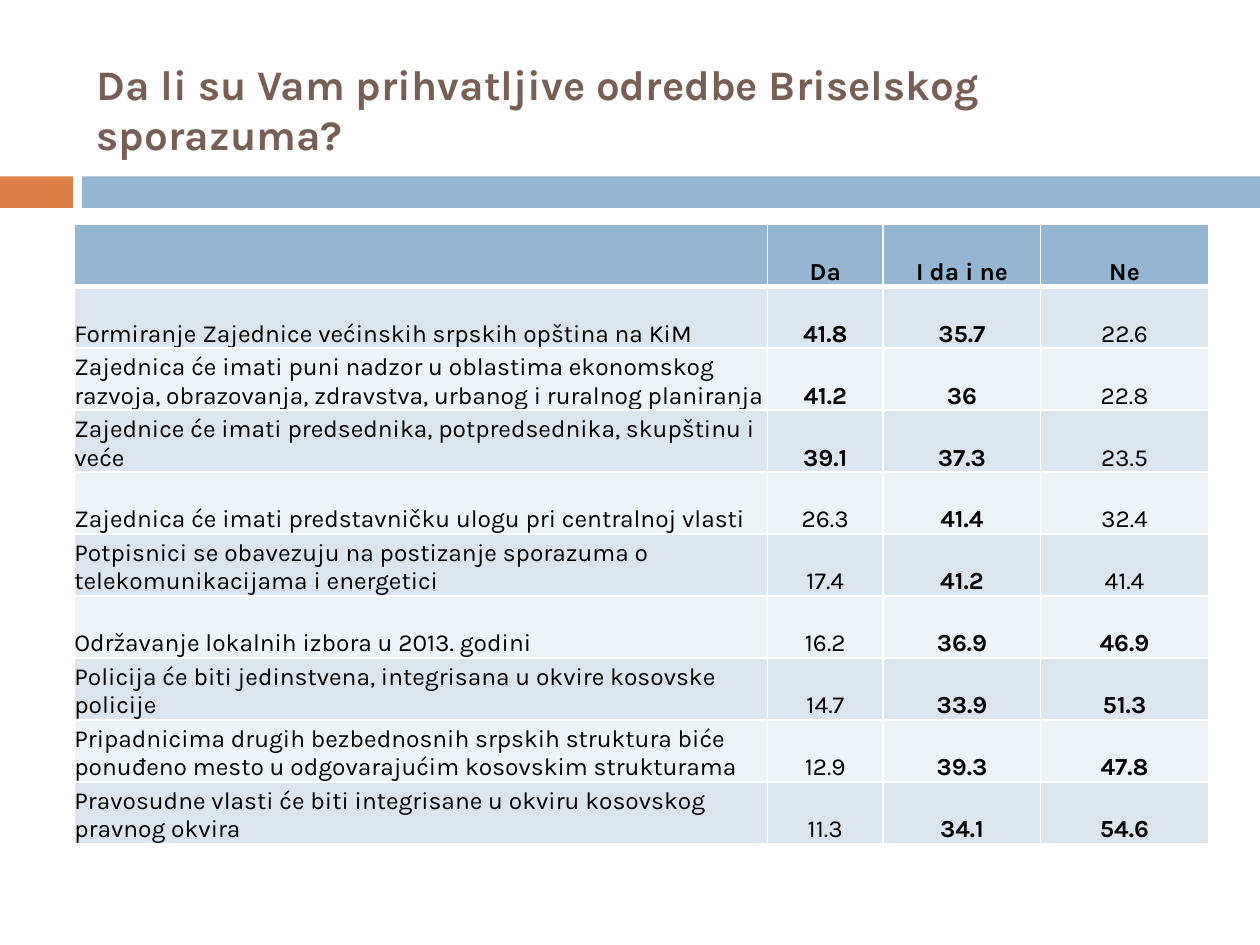
from pptx import Presentation
from pptx.dml.color import RGBColor
from pptx.enum.shapes import MSO_SHAPE
from pptx.enum.text import MSO_ANCHOR, PP_ALIGN
from pptx.oxml import parse_xml
from pptx.oxml.ns import nsdecls
from pptx.util import Inches, Pt

RECTANGLE = MSO_SHAPE.RECTANGLE
MIDDLE, BOTTOM = MSO_ANCHOR.MIDDLE, MSO_ANCHOR.BOTTOM
LEFT, CENTER = PP_ALIGN.LEFT, PP_ALIGN.CENTER
FONT = "Karla"
COLORS = {
    "title": "775F55", "accent": "DD8047", "band": "94B6D2", "text": "000000",
    "odd": "DCE5EE", "even": "EEF3F7", "border": "FFFFFF",
}
WIDTH, HEIGHT = Inches(10), Inches(7.5)
COLUMN_WIDTHS = [5.5, 0.92, 1.25, 1.33]
ROW_HEIGHT = 0.492
HEADERS = ["", "Da", "I da i ne", "Ne"]
ANSWERS = [
    ("Formiranje Zajednice većinskih srpskih opština na KiM", "41.8", "35.7", "22.6"),
    ("Zajednica će imati puni nadzor u oblastima ekonomskog razvoja, obrazovanja, "
     "zdravstva, urbanog i ruralnog planiranja", "41.2", "36", "22.8"),
    ("Zajednice će imati predsednika, potpredsednika, skupštinu i veće", "39.1", "37.3", "23.5"),
    ("Zajednica će imati predstavničku ulogu pri centralnoj vlasti", "26.3", "41.4", "32.4"),
    ("Potpisnici se obavezuju na postizanje sporazuma o telekomunikacijama i energetici",
     "17.4", "41.2", "41.4"),
    ("Održavanje lokalnih izbora u 2013. godini", "16.2", "36.9", "46.9"),
    ("Policija će biti jedinstvena, integrisana u okvire kosovske policije",
     "14.7", "33.9", "51.3"),
    ("Pripadnicima drugih bezbednosnih srpskih struktura biće ponuđeno mesto u "
     "odgovarajućim kosovskim strukturama", "12.9", "39.3", "47.8"),
    ("Pravosudne vlasti će biti integrisane u okviru kosovskog pravnog okvira",
     "11.3", "34.1", "54.6"),
]
BOLD_COLUMNS = [{1, 2, 3}] + [{1, 2}] * 3 + [{2}] * 2 + [{2, 3}] * 4


def write(frame, text, size=14, color="text", bold=False, align=LEFT):
    para = frame.paragraphs[0]
    para.alignment = align
    span = para.add_run()
    span.text = text
    span.font.name = FONT
    span.font.size = Pt(size)
    span.font.bold = bold
    span.font.color.rgb = RGBColor.from_string(COLORS[color])


def add_borders(cell, **points):
    properties = cell._tc.get_or_add_tcPr()
    for position, side in enumerate("LRTB"):
        properties.insert(position, parse_xml(
            f'<a:ln{side} {nsdecls("a")} w="{Pt(points.get(side, 1))}"><a:solidFill>'
            f'<a:srgbClr val="{COLORS["border"]}"/></a:solidFill></a:ln{side}>'))


deck = Presentation()
deck.slide_width, deck.slide_height = WIDTH, HEIGHT
page = deck.slides.add_slide(deck.slide_layouts[6])

for left, width, color in [(0, 0.58, "accent"), (0.65, 9.35, "band")]:
    bar = page.shapes.add_shape(
        RECTANGLE, Inches(left), Inches(1.4), Inches(width), Inches(0.25))
    bar.shadow.inherit = False
    bar.fill.solid()
    bar.fill.fore_color.rgb = RGBColor.from_string(COLORS[color])
    bar.line.fill.background()

title_box = page.shapes.add_textbox(Inches(0.67), Inches(0.25), Inches(8.92), Inches(1.22))
title_box.text_frame.word_wrap = True
title_box.text_frame.vertical_anchor = MIDDLE
write(title_box.text_frame, "Da li su Vam prihvatljive odredbe Briselskog sporazuma?",
      size=24, color="title", bold=True)

rows = [HEADERS] + ANSWERS
table = page.shapes.add_table(
    len(rows), len(HEADERS), Inches(0.59), Inches(1.78),
    Inches(sum(COLUMN_WIDTHS)), Inches(ROW_HEIGHT * len(rows))).table
for column, width in zip(table.columns, COLUMN_WIDTHS):
    column.width = Inches(width)

for row_index, texts in enumerate(rows):
    table.rows[row_index].height = Inches(ROW_HEIGHT)
    is_header = row_index == 0
    fill = "band" if is_header else "odd" if row_index % 2 else "even"
    for column_index, text in enumerate(texts):
        cell = table.cell(row_index, column_index)
        cell.fill.solid()
        cell.fill.fore_color.rgb = RGBColor.from_string(COLORS[fill])
        cell.vertical_anchor = BOTTOM
        cell.margin_left = cell.margin_right = cell.margin_top = cell.margin_bottom = 0
        add_borders(cell, B=3 if is_header else 1, T=3 if row_index == 1 else 1)
        if text:
            write(cell.text_frame, text, bold=column_index in BOLD_COLUMNS[row_index],
                  align=CENTER if column_index else LEFT)

deck.save("out.pptx")
